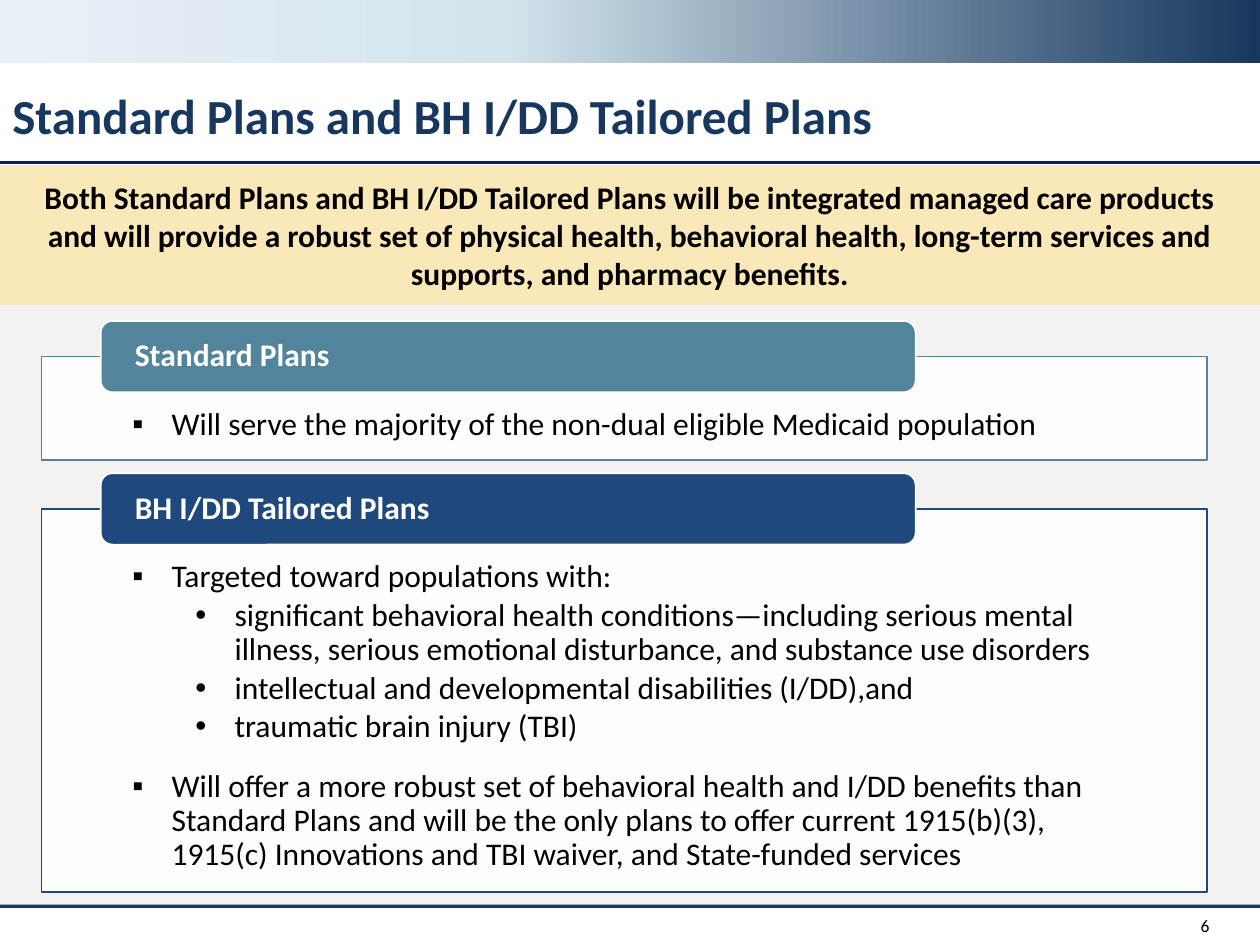
"""Build the Standard Plans and BH I/DD Tailored Plans slide."""
from copy import deepcopy
from dataclasses import dataclass

from lxml.etree import SubElement
from pptx import Presentation
from pptx.dml.color import RGBColor
from pptx.enum.shapes import MSO_CONNECTOR, MSO_SHAPE
from pptx.enum.text import MSO_ANCHOR, PP_ALIGN
from pptx.oxml.ns import qn
from pptx.util import Cm, Pt


@dataclass(frozen=True)
class Theme:
    font: str = "Calibri"
    title_size: float = 28
    body_size: float = 18
    number_size: float = 10
    navy: str = "17375E"
    rule: str = "002060"
    blue: str = "1F497D"
    teal: str = "52849C"
    sand: str = "FAE8B8"
    grey: str = "F2F2F2"
    white: str = "FFFFFF"
    black: str = "000000"
    band: tuple = ((0, "17375E"), (0.6, "D3E4ED"), (1, "E9F1F6"))


WIDTH, HEIGHT = 25.4, 19.05
SQUARE = dict(char="▪", left=0.79)
DOT = dict(char="•", left=2.06)
HANG = 0.79
AFTER = dict(space_after=Pt(2.7))
BEFORE = dict(space_before=Pt(12))
TIGHT = dict(line_spacing=0.9)

SECTIONS = [
    ("Standard Plans", "teal", 7.19, 2.08, [
        ("Will serve the majority of the non-dual eligible Medicaid population", SQUARE, AFTER),
    ]),
    ("BH I/DD Tailored Plans", "blue", 10.26, 7.72, [
        ("Targeted toward populations with:", SQUARE, AFTER),
        ("significant behavioral health conditions—including serious mental illness, "
         "serious emotional disturbance, and substance use disorders", DOT, AFTER),
        ("intellectual and developmental disabilities (I/DD),and", DOT, AFTER),
        ("traumatic brain injury (TBI)", DOT, AFTER),
        ("Will offer a more robust set of behavioral health and I/DD benefits than "
         "Standard Plans and will be the only plans to offer current 1915(b)(3), "
         "1915(c) Innovations and TBI waiver, and State-funded services", SQUARE, BEFORE),
    ]),
]


def apply(obj, values):
    for name, value in values.items():
        setattr(obj, name, value)


class SlideBuilder:
    def __init__(self, slide, theme):
        self.s = slide
        self.theme = theme

    def rect(self, x, y, w, h, fill=None, line=None, kind=MSO_SHAPE.RECTANGLE, alpha=None):
        sp = self.s.shapes.add_shape(kind, Cm(x), Cm(y), Cm(w), Cm(h))
        sp.shadow.inherit = False
        if fill:
            sp.fill.solid()
            sp.fill.fore_color.rgb = RGBColor.from_string(fill)
        if alpha:
            color = sp._element.spPr.find(".//" + qn("a:srgbClr"))
            SubElement(color, qn("a:alpha"), val=str(alpha * 1000))
        if line:
            sp.line.color.rgb = RGBColor.from_string(line)
            sp.line.width = Pt(1)
        else:
            sp.line.fill.background()
        return sp

    def gradient(self, x, y, w, h, stops):
        sp = self.rect(x, y, w, h)
        sp.fill.gradient()
        sp.fill.gradient_angle = 180
        gs_list = sp._element.spPr.find(".//" + qn("a:gsLst"))
        gs_list.append(deepcopy(gs_list[-1]))
        for stop, (position, color) in zip(sp.fill.gradient_stops, stops):
            stop.position = position
            stop.color.rgb = RGBColor.from_string(color)

    def rule(self, y, color, width):
        cn = self.s.shapes.add_connector(MSO_CONNECTOR.STRAIGHT, 0, Cm(y), Cm(WIDTH), Cm(y))
        cn.line.color.rgb = RGBColor.from_string(color)
        cn.line.width = Pt(width)
        SubElement(cn._element.spPr, qn("a:effectLst"))

    def textbox(self, x, y, w, h):
        return self.s.shapes.add_textbox(Cm(x), Cm(y), Cm(w), Cm(h))

    def frame(self, sp, anchor, side=0.25, top=0.13, bottom=0.13):
        tf = sp.text_frame
        apply(tf, dict(word_wrap=True, vertical_anchor=anchor, margin_left=Cm(side),
                       margin_right=Cm(side), margin_top=Cm(top), margin_bottom=Cm(bottom)))
        return tf

    def add_text(self, p, text, color, size, bold=False, **para):
        apply(p, dict(alignment=PP_ALIGN.LEFT) | para)
        r = p.add_run()
        r.text = text
        apply(r.font, dict(name=self.theme.font, size=Pt(size), bold=bold))
        r.font.color.rgb = RGBColor.from_string(color)

    def bullet(self, p, char, left):
        pPr = p._p.get_or_add_pPr()
        pPr.set("marL", str(Cm(left)))
        pPr.set("indent", str(-Cm(HANG)))
        SubElement(pPr, qn("a:buFont"), typeface="Arial")
        SubElement(pPr, qn("a:buChar"), char=char)

    def section(self, heading, color, y, h, items):
        t = self.theme
        box = self.rect(0.84, y, 23.5, h, t.white, color, alpha=90)
        tf = self.frame(box, MSO_ANCHOR.TOP, 1.83, 1.04, 0.36)
        for i, (text, mark, spacing) in enumerate(items):
            p = tf.add_paragraph() if i else tf.paragraphs[0]
            self.add_text(p, text, t.black, t.body_size, **TIGHT, **spacing)
            self.bullet(p, **mark)
        tab_h = 1.44
        tab = self.rect(2.03, y - tab_h / 2, 16.43, tab_h, color, t.white,
                        MSO_SHAPE.ROUNDED_RECTANGLE)
        tf = self.frame(tab, MSO_ANCHOR.MIDDLE, 0.62, 0, 0)
        self.add_text(tf.paragraphs[0], heading, t.white, t.body_size, True, **TIGHT)


def main():
    prs = Presentation()
    prs.slide_width, prs.slide_height = Cm(WIDTH), Cm(HEIGHT)
    t = Theme()
    b = SlideBuilder(prs.slides.add_slide(prs.slide_layouts[6]), t)

    b.gradient(0, 0, WIDTH, 1.27, t.band)
    b.rule(3.28, t.rule, 2)
    b.rule(18.26, t.navy, 2.25)

    tf = b.frame(b.textbox(0, 1.73, 21.79, 1.52), MSO_ANCHOR.TOP)
    b.add_text(tf.paragraphs[0], "Standard Plans and BH I/DD Tailored Plans",
               t.navy, t.title_size, True, **TIGHT)
    tf = b.frame(b.textbox(23.06, 18.26, 1.57, 0.79), MSO_ANCHOR.MIDDLE)
    b.add_text(tf.paragraphs[0], "6", t.black, t.number_size, alignment=PP_ALIGN.RIGHT)

    b.rect(0, 5.72, WIDTH, 12.52, t.grey)
    banner = b.rect(0, 3.33, WIDTH, 2.82, t.sand)
    tf = b.frame(banner, MSO_ANCHOR.MIDDLE, 0.76, 0.15, 0.15)
    b.add_text(tf.paragraphs[0],
               "Both Standard Plans and BH I/DD Tailored Plans will be integrated managed care "
               "products and will provide a robust set of physical health, behavioral health, "
               "long-term services and supports, and pharmacy benefits.",
               t.black, t.body_size, True, alignment=PP_ALIGN.CENTER)

    for heading, color, y, h, items in SECTIONS:
        b.section(heading, getattr(t, color), y, h, items)

    prs.save("out.pptx")


if __name__ == "__main__":
    main()
